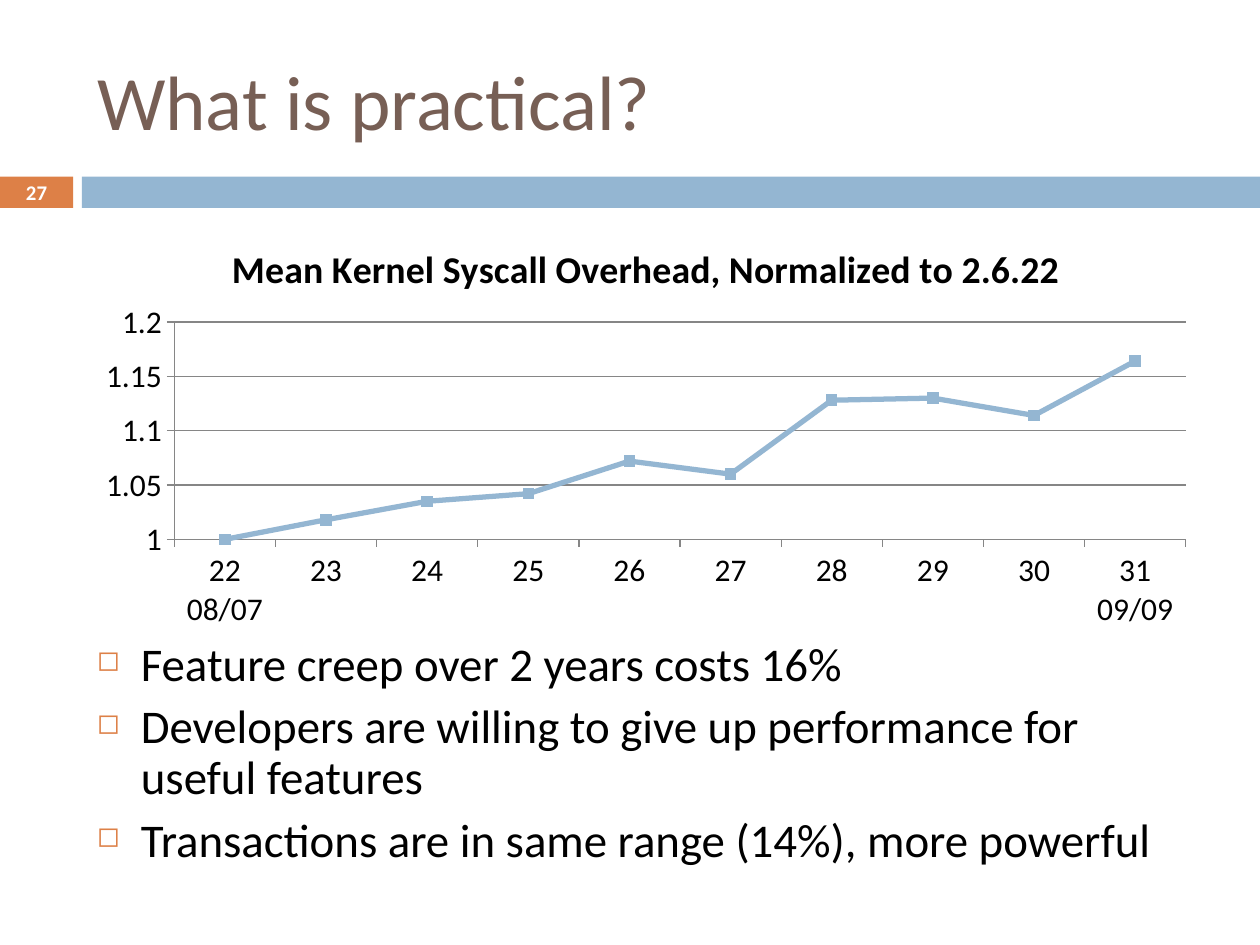
from typing import NamedTuple, Optional

from lxml.etree import SubElement
from pptx import Presentation
from pptx.chart.data import CategoryChartData
from pptx.dml.color import RGBColor
from pptx.enum.chart import XL_CHART_TYPE as ChartType, XL_MARKER_STYLE as Marker
from pptx.enum.chart import XL_TICK_MARK as Tick
from pptx.enum.shapes import MSO_SHAPE as Preset
from pptx.enum.text import MSO_ANCHOR as Anchor, PP_ALIGN as Align
from pptx.oxml import parse_xml
from pptx.oxml.ns import nsdecls, qn
from pptx.util import Emu, Inches, Pt

FONT = "Calibri"
BLACK, WHITE, BROWN = "000000", "FFFFFF", "775F55"
ORANGE, BLUE, GRAY = "DD8047", "94B6D2", "868686"
WIDTH, HEIGHT = Inches(10), Inches(7.5)
LEFT, SPAN = 0.067, 0.892


class Box(NamedTuple):
    left: float
    top: float
    width: float
    height: float

    def emu(self) -> tuple:
        return tuple(Emu(round(share * side))
                     for share, side in zip(self, (WIDTH, HEIGHT) * 2))


class Bullet(NamedTuple):
    text: str
    line_spacing: Optional[float] = 0.9


class Band(NamedTuple):
    box: Box
    color: str
    label: str = ""


BANDS = (
    Band(Box(0, 0.187, 0.058, 0.033), ORANGE, "27"),
    Band(Box(0.065, 0.187, 0.935, 0.033), BLUE),
)
OVERHEAD = {
    "22 08/07": 1, "23": 1.018, "24": 1.035, "25": 1.042, "26": 1.072,
    "27": 1.06, "28": 1.128, "29": 1.13, "30": 1.114, "31 09/09": 1.164,
}
BULLETS = (
    Bullet("Feature creep over 2 years costs 16%", None),
    Bullet("Developers are willing to give up performance for useful features"),
    Bullet("Transactions are in same range (14%), more powerful"),
)
PLOT = {"x": 0.08, "y": 0.245, "w": 0.9, "h": 0.523}


def rgb(color: str) -> RGBColor:
    return RGBColor.from_string(color)


def set_font(font, size: float, color: str, bold: bool = False) -> None:
    font.name, font.size, font.bold = FONT, Pt(size), bold
    font.color.rgb = rgb(color)


def set_line(line, color: str, width: float) -> None:
    line.color.rgb, line.width = rgb(color), Pt(width)


def add_title(slide, text: str) -> None:
    title = slide.shapes.title
    title.left, title.top, title.width, title.height = Box(LEFT, 0.033, SPAN, 0.144).emu()
    title.text_frame.text = text
    title.text_frame.vertical_anchor = Anchor.MIDDLE
    heading = title.text_frame.paragraphs[0]
    heading.alignment = Align.LEFT
    set_font(heading.font, 44, BROWN)


def add_band(slide, band: Band) -> None:
    bar = slide.shapes.add_shape(Preset.RECTANGLE, *band.box.emu())
    bar.shadow.inherit = False
    bar.fill.solid()
    bar.fill.fore_color.rgb = rgb(band.color)
    bar.line.fill.background()
    if band.label:
        frame = bar.text_frame
        frame.margin_top = frame.margin_bottom = 0
        frame.vertical_anchor = Anchor.MIDDLE
        frame.text = band.label
        number = frame.paragraphs[0]
        number.alignment = Align.CENTER
        set_font(number.font, 11.9, WHITE, bold=True)


def place_plot(chart) -> None:
    plot_area = chart._chartSpace.chart.plotArea
    for layout in plot_area.findall(qn("c:layout")):
        plot_area.remove(layout)
    layout = parse_xml(f"<c:layout {nsdecls('c')}><c:manualLayout/></c:layout>")
    settings = {"layoutTarget": "inner", "xMode": "edge", "yMode": "edge", **PLOT}
    for name, value in settings.items():
        SubElement(layout[0], qn(f"c:{name}")).set("val", str(value))
    plot_area.insert(0, layout)


def add_overhead_chart(slide, title: str) -> None:
    data = CategoryChartData()
    data.categories = list(OVERHEAD)
    data.add_series("Series 1", list(OVERHEAD.values()))
    chart = slide.shapes.add_chart(
        ChartType.LINE_MARKERS, *Box(LEFT, 0.233, SPAN, 0.44).emu(), data).chart
    set_font(chart.font, 18, BLACK)
    chart.has_legend = False
    chart.has_title = True
    chart.chart_title.include_in_layout = False
    chart.chart_title.text_frame.text = title
    set_font(chart.chart_title.text_frame.paragraphs[0].font, 21.6, BLACK, bold=True)

    scale = chart.value_axis
    scale.minimum_scale, scale.maximum_scale, scale.major_unit = 1, 1.2, 0.05
    scale.has_major_gridlines = True
    set_line(scale.major_gridlines.format.line, GRAY, 0.75)
    scale.tick_labels.number_format = "General"
    scale.tick_labels.number_format_is_linked = False
    for axis in (scale, chart.category_axis):
        axis.major_tick_mark = Tick.OUTSIDE
        axis.minor_tick_mark = Tick.NONE
        set_line(axis.format.line, GRAY, 0.75)

    chart.plots[0].vary_by_categories = False
    overhead = chart.plots[0].series[0]
    overhead.smooth = False
    set_line(overhead.format.line, BLUE, 3)
    overhead.marker.style, overhead.marker.size = Marker.SQUARE, 6
    overhead.marker.format.fill.solid()
    overhead.marker.format.fill.fore_color.rgb = rgb(BLUE)
    set_line(overhead.marker.format.line, BLUE, 0.75)
    place_plot(chart)


def add_bullets(slide, bullets: tuple[Bullet, ...]) -> None:
    frame = slide.shapes.add_textbox(*Box(LEFT, 0.665, SPAN, 0.267).emu()).text_frame
    frame.word_wrap = True
    for index, bullet in enumerate(bullets):
        point = frame.add_paragraph() if index else frame.paragraphs[0]
        point.text = bullet.text
        point.space_before = Pt(7)
        if bullet.line_spacing:
            point.line_spacing = bullet.line_spacing
        set_font(point.font, 26.8, BLACK)
        properties = point._p.get_or_add_pPr()
        properties.set("marL", str(Inches(0.35)))
        properties.set("indent", str(Inches(-0.35)))
        marks = parse_xml(
            f'<a:pPr {nsdecls("a")}><a:buClr><a:srgbClr val="{ORANGE}"/></a:buClr>'
            '<a:buSzPct val="60000"/><a:buChar char="◻"/></a:pPr>')
        defaults = properties.find(qn("a:defRPr"))
        for mark in list(marks):
            defaults.addprevious(mark)


def main() -> None:
    deck = Presentation()
    deck.slide_width, deck.slide_height = WIDTH, HEIGHT
    slide = deck.slides.add_slide(deck.slide_layouts.get_by_name("Title Only"))
    for band in BANDS:
        add_band(slide, band)
    add_title(slide, "What is practical?")
    add_overhead_chart(slide, "Mean Kernel Syscall Overhead, Normalized to 2.6.22")
    add_bullets(slide, BULLETS)
    deck.save("out.pptx")


if __name__ == "__main__":
    main()
